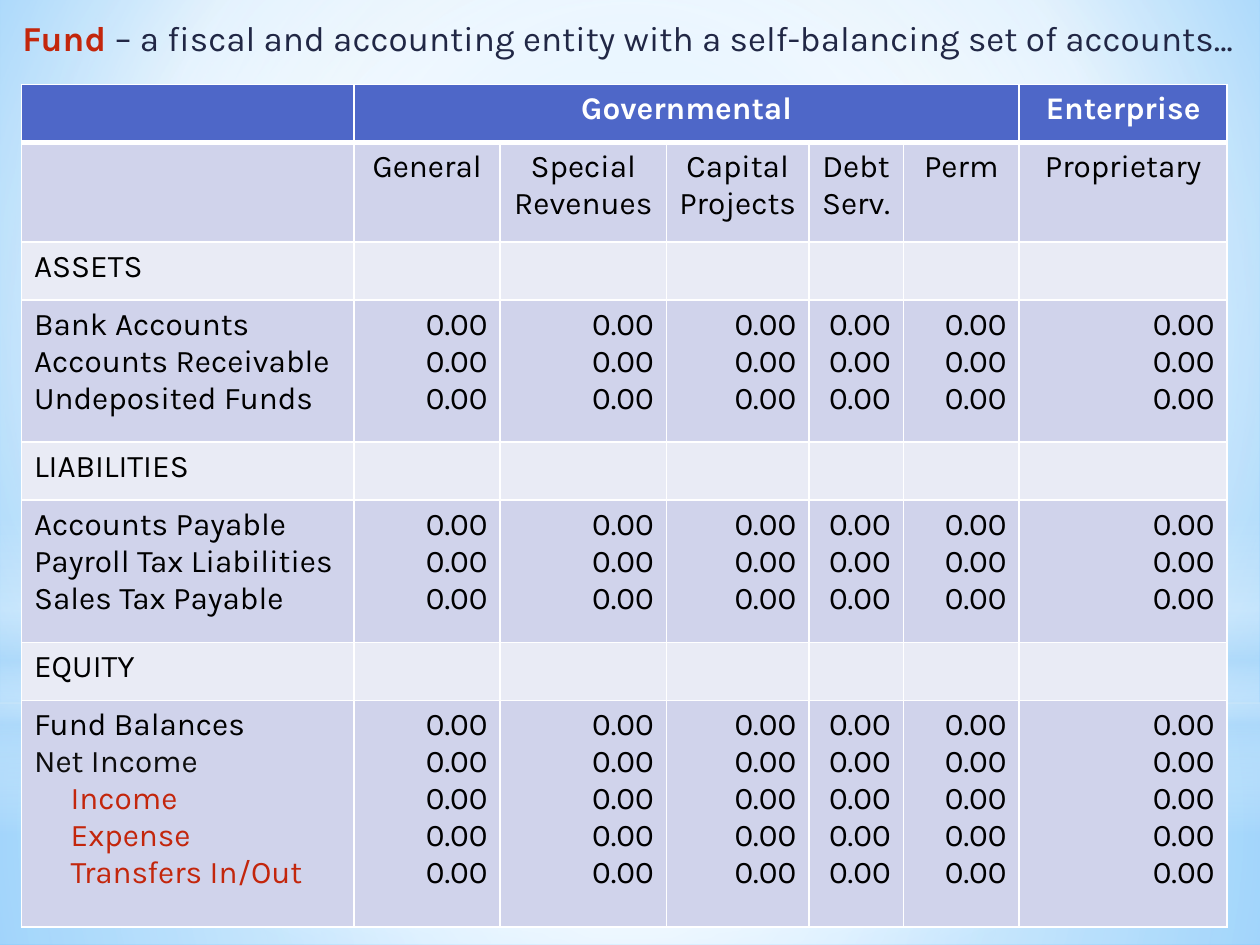
from dataclasses import dataclass
from typing import Optional

from lxml import etree
from pptx import Presentation
from pptx import util as u
from pptx.dml.color import RGBColor
from pptx.enum import shapes, text
from pptx.oxml.ns import qn

FONT = "Karla"
COLOURS = {
    "white": "FFFFFF", "sky": "B4DCFA", "black": "000000",
    "header": "4E67C8", "band": "D0D3EB", "section": "E9EBF5",
    "red": "C3260C", "navy": "212745", "ink": "0D0D0D",
    "edge": "9ED5FF", "deep": "5BB9FF",
}
LEFT, CENTRE, RIGHT = text.PP_ALIGN.LEFT, text.PP_ALIGN.CENTER, text.PP_ALIGN.RIGHT


@dataclass
class Gradient:
    stops: list[tuple[int, str, int]]  # position %, colour, opacity %
    focus: Optional[tuple[int, int, int, int]] = (50, 50, 50, 50)  # None: top to bottom


@dataclass
class Glow:
    kind: shapes.MSO_SHAPE
    top: float
    height: float
    gradient: Gradient


@dataclass
class Line:
    words: str
    align: text.PP_ALIGN = LEFT
    colour: str = "black"
    bold: bool = False
    indent: float = 0


@dataclass
class Section:
    heading: str
    accounts: list[Line]
    height: float


def rgb(name: str) -> RGBColor:
    return RGBColor.from_string(COLOURS[name])


def add_gradient(fill, holder, gradient: Gradient) -> None:
    fill.gradient()
    node = holder.find(qn("a:gradFill"))
    for child in list(node):
        node.remove(child)
    stop_list = etree.SubElement(node, qn("a:gsLst"))
    for position, colour, opacity in gradient.stops:
        stop = etree.SubElement(stop_list, qn("a:gs"), pos=str(position * 1000))
        tint = etree.SubElement(stop, qn("a:srgbClr"), val=COLOURS[colour])
        etree.SubElement(tint, qn("a:alpha"), val=str(opacity * 1000))
    if gradient.focus is None:
        etree.SubElement(node, qn("a:lin"), ang="5400000", scaled="0")
    else:
        shade = etree.SubElement(node, qn("a:path"), path="circle")
        sides = {side: str(value * 1000) for side, value in zip("ltrb", gradient.focus)}
        etree.SubElement(shade, qn("a:fillToRect"), **sides)


def add_glow(page, glow: Glow) -> None:
    shape = page.shapes.add_shape(
        glow.kind, 0, u.Inches(glow.top), u.Inches(10), u.Inches(glow.height))
    shape.shadow.inherit = False
    shape.line.fill.background()
    add_gradient(shape.fill, shape.element.spPr, glow.gradient)


def style_cell(cell, fill: str, top: float = 1, bottom: float = 1) -> None:
    properties = cell._tc.get_or_add_tcPr()
    for side, width in zip("LRTB", (1, 1, top, bottom)):
        border = etree.SubElement(properties, qn(f"a:ln{side}"), w=str(u.Pt(width)))
        paint = etree.SubElement(border, qn("a:solidFill"))
        etree.SubElement(paint, qn("a:srgbClr"), val=COLOURS["white"])
    cell.fill.solid()
    cell.fill.fore_color.rgb = rgb(fill)


def write_cell(cell, lines: list[Line]) -> None:
    frame = cell.text_frame
    for index, line in enumerate(lines):
        para = frame.add_paragraph() if index else frame.paragraphs[0]
        para.text = line.words
        para.alignment = line.align
        para.font.name, para.font.size = FONT, u.Pt(18)
        para.font.bold = line.bold
        para.font.color.rgb = rgb(line.colour)
        if line.indent:
            para._p.get_or_add_pPr().set("marL", str(u.Inches(line.indent)))


BACKDROP = Gradient([(0, "edge", 100), (60, "white", 100), (100, "deep", 100)],
                    (20, 10, 20, 60))
BOX, OVAL = shapes.MSO_SHAPE.RECTANGLE, shapes.MSO_SHAPE.OVAL
GLOWS = [
    Glow(BOX, 5.58, 1.92, Gradient([(0, "white", 91), (37, "white", 76), (100, "sky", 79)])),
    Glow(BOX, 0, 5.58, Gradient([(0, "white", 89), (48, "white", 62), (100, "sky", 79)])),
    Glow(BOX, 4.12, 2.5, Gradient(
        [(0, "white", 0), (29, "white", 30), (45, "sky", 40),
         (55, "white", 26), (65, "sky", 60), (100, "white", 0)], None)),
    Glow(OVAL, 1.75, 5.58, Gradient([(0, "white", 100), (56, "white", 0)])),
]
COLUMN_WIDTHS = [2.64, 1.16, 1.32, 1.13, 0.75, 0.92, 1.65]
FUNDS = [["General"], ["Special", "Revenues"], ["Capital", "Projects"],
         ["Debt", "Serv."], ["Perm"], ["Proprietary"]]
SECTIONS = [
    Section("ASSETS", [Line("Bank Accounts"), Line("Accounts Receivable"),
                       Line("Undeposited Funds")], 1.13),
    Section("LIABILITIES", [Line("Accounts Payable"), Line("Payroll Tax Liabilities"),
                            Line("Sales Tax Payable")], 1.13),
    Section("EQUITY", [Line("Fund Balances"), Line("Net Income", colour="ink")]
            + [Line(words, colour="red", indent=0.29)
               for words in ("Income", "Expense", "Transfers In/Out")], 1.8),
]


def add_title(page) -> None:
    box = page.shapes.add_textbox(
        u.Inches(0.08), u.Inches(0.08), u.Inches(9.83), u.Inches(0.58))
    frame = box.text_frame
    frame.word_wrap = True
    frame.vertical_anchor = text.MSO_ANCHOR.TOP
    para = frame.paragraphs[0]
    for words, colour, bold in (
            ("Fund ", "red", True),
            ("– a fiscal and accounting entity with a self-balancing set of accounts…",
             "navy", False)):
        span = para.add_run()
        span.text = words
        span.font.name, span.font.size = FONT, u.Pt(20)
        span.font.bold = bold
        span.font.color.rgb = rgb(colour)


def add_fund_table(page) -> None:
    heights = [0.46, 0.79]
    for section in SECTIONS:
        heights += [0.46, section.height]
    table = page.shapes.add_table(
        len(heights), len(COLUMN_WIDTHS), u.Inches(0.17), u.Inches(0.67),
        u.Inches(sum(COLUMN_WIDTHS)), u.Inches(sum(heights))).table
    for column, width in zip(table.columns, COLUMN_WIDTHS):
        column.width = u.Inches(width)
    for index, (row, height) in enumerate(zip(table.rows, heights)):
        row.height = u.Inches(height)
        fill = "header" if index == 0 else "band" if index % 2 else "section"
        for cell in row.cells:
            style_cell(cell, fill, top=3 if index == 1 else 1,
                       bottom=3 if index == 0 else 1)

    # Fund groups and fund names
    table.cell(0, 1).merge(table.cell(0, 5))
    for column, words in ((1, "Governmental"), (6, "Enterprise")):
        write_cell(table.cell(0, column), [Line(words, CENTRE, "white", True)])
    for column, names in enumerate(FUNDS, start=1):
        write_cell(table.cell(1, column), [Line(name, CENTRE) for name in names])

    # Each section: a heading row, then a row of accounts and balances
    for index, section in enumerate(SECTIONS):
        row = 2 + 2 * index
        write_cell(table.cell(row, 0), [Line(section.heading)])
        write_cell(table.cell(row + 1, 0), section.accounts)
        for column in range(1, len(COLUMN_WIDTHS)):
            write_cell(table.cell(row + 1, column),
                       [Line("0.00", RIGHT) for _ in section.accounts])


def main() -> None:
    deck = Presentation()
    deck.slide_width, deck.slide_height = u.Inches(10), u.Inches(7.5)
    page = deck.slides.add_slide(deck.slide_layouts[6])

    # Background wash
    fill = page.background.fill
    fill.solid()
    add_gradient(fill, page.element.find(".//" + qn("p:bgPr")), BACKDROP)
    for glow in GLOWS:
        add_glow(page, glow)

    add_fund_table(page)
    add_title(page)
    deck.save("out.pptx")


if __name__ == "__main__":
    main()
